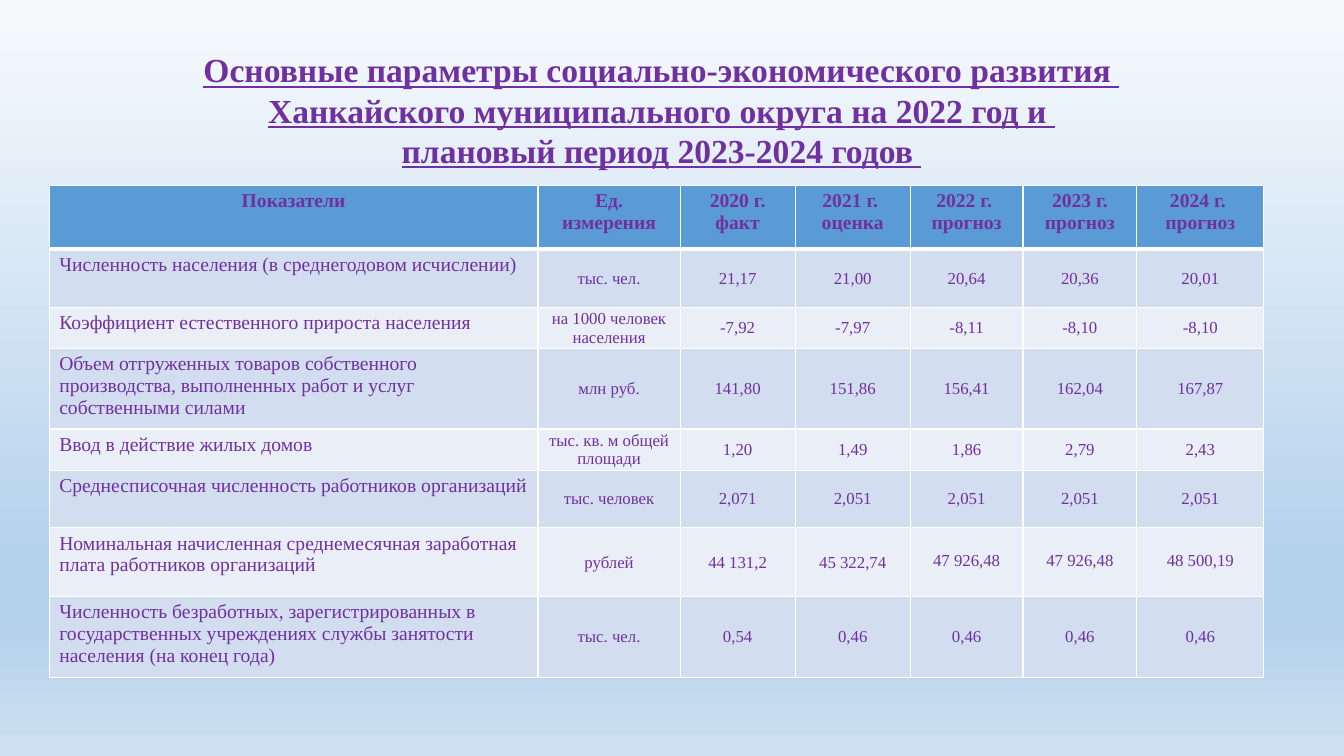
from lxml import etree
from pptx import Presentation
from pptx.dml.color import RGBColor
from pptx.enum.text import MSO_ANCHOR, MSO_AUTO_SIZE, PP_ALIGN
from pptx.oxml.ns import qn
from pptx.util import Cm, Pt

CENTER, LEFT = PP_ALIGN.CENTER, PP_ALIGN.LEFT
TOP, MIDDLE = MSO_ANCHOR.TOP, MSO_ANCHOR.MIDDLE
GROW = MSO_AUTO_SIZE.SHAPE_TO_FIT_TEXT

PURPLE = RGBColor(0x70, 0x30, 0xA0)
WHITE = RGBColor(0xFF, 0xFF, 0xFF)
HEADER_BLUE = RGBColor(0x5B, 0x9B, 0xD5)
BAND_DARK = RGBColor(0xD2, 0xDE, 0xEF)
BAND_LIGHT = RGBColor(0xEA, 0xEF, 0xF7)
SKY_TOP = RGBColor(0xF7, 0xFA, 0xFD)
SKY_MIDDLE = RGBColor(0xB5, 0xD2, 0xEC)
SKY_BOTTOM = RGBColor(0xCE, 0xE1, 0xF2)

SKY = [(0, SKY_TOP), (74, SKY_MIDDLE), (83, SKY_MIDDLE), (100, SKY_BOTTOM)]
TITLE = [
    "Основные параметры социально-экономического развития ",
    "Ханкайского муниципального округа на 2022 год и ",
    "плановый период 2023-2024 годов ",
]
HEADERS = [
    ["Показатели"], ["Ед.", "измерения"], ["2020 г.", "факт"], ["2021 г. ", "оценка"],
    ["2022 г. ", "прогноз"], ["2023 г.", "прогноз"], ["2024 г. ", "прогноз"],
]
INDICATORS = [
    ("Численность населения (в среднегодовом исчислении)",
     "тыс. чел.", "21,17", "21,00", "20,64", "20,36", "20,01"),
    ("Коэффициент естественного прироста населения",
     "на 1000 человек населения", "-7,92", "-7,97", "-8,11", "-8,10", "-8,10"),
    ("Объем отгруженных товаров собственного производства, "
     "выполненных работ и услуг собственными силами",
     "млн руб.", "141,80", "151,86", "156,41", "162,04", "167,87"),
    ("Ввод в действие жилых домов",
     "тыс. кв. м общей площади", "1,20", "1,49", "1,86", "2,79", "2,43"),
    ("Среднесписочная численность работников организаций",
     "тыс. человек", "2,071", "2,051", "2,051", "2,051", "2,051"),
    ("Номинальная начисленная среднемесячная заработная плата работников организаций",
     "рублей", "44 131,2", "45 322,74", "47 926,48", "47 926,48", "48 500,19"),
    ("Численность безработных, зарегистрированных в государственных учреждениях "
     "службы занятости населения (на конец года)",
     "тыс. чел.", "0,54", "0,46", "0,46", "0,46", "0,46"),
]
COLUMN_WIDTHS = [12.32, 3.58, 2.9, 2.9, 2.84, 2.87, 3.2]
ROW_HEIGHTS = [1.6, 1.47, 1.02, 1.42, 0.91, 1.45, 1.73, 1.73]
WAGE_ROW, FIRST_FORECAST_COLUMN = 6, 4


class SlideBuilder:
    font_name = "Times New Roman"
    text_color = PURPLE

    def __init__(self, slide):
        self.slide = slide

    def background(self, stops):
        fill = self.slide.background.fill
        fill.gradient()
        fill.gradient_angle = 270
        stop_list = self.slide.element.find(".//" + qn("a:gsLst"))
        for stop in list(stop_list):
            stop_list.remove(stop)
        for position, color in stops:
            stop = etree.SubElement(stop_list, qn("a:gs"), pos=str(position * 1000))
            etree.SubElement(stop, qn("a:srgbClr"), val=str(color))

    def add_lines(self, frame, lines, size, align=CENTER, bold=False, underline=None):
        for index, line in enumerate(lines):
            paragraph = frame.add_paragraph() if index else frame.paragraphs[0]
            paragraph.alignment = align
            run = paragraph.add_run()
            run.text = line
            run.font.name = self.font_name
            run.font.size = Pt(size)
            run.font.bold = bold
            run.font.underline = underline
            run.font.color.rgb = self.text_color

    def title(self, lines, left, top, width, height):
        box = self.slide.shapes.add_textbox(Cm(left), Cm(top), Cm(width), Cm(height))
        box.text_frame.word_wrap = True
        box.text_frame.auto_size = GROW
        self.add_lines(box.text_frame, lines, 24, bold=True, underline=True)

    def borders(self, cell, widths):
        properties = cell._tc.get_or_add_tcPr()
        for side, width in widths.items():
            line = etree.SubElement(properties, qn("a:ln" + side), w=str(Pt(width)))
            fill = etree.SubElement(line, qn("a:solidFill"))
            etree.SubElement(fill, qn("a:srgbClr"), val=str(WHITE))

    def cell(self, cell, lines, color, widths, size, anchor=TOP, **style):
        self.borders(cell, widths)
        cell.fill.solid()
        cell.fill.fore_color.rgb = color
        cell.vertical_anchor = anchor
        if anchor == MIDDLE:
            cell.margin_left = cell.margin_right = cell.margin_top = Cm(0.02)
            cell.margin_bottom = Cm(0)
        self.add_lines(cell.text_frame, lines, size, **style)

    def table(self, left, top):
        frame = self.slide.shapes.add_table(
            len(ROW_HEIGHTS), len(COLUMN_WIDTHS), Cm(left), Cm(top),
            Cm(sum(COLUMN_WIDTHS)), Cm(sum(ROW_HEIGHTS)))
        table = frame.table
        for column, width in zip(table.columns, COLUMN_WIDTHS):
            column.width = Cm(width)
        for row, height in zip(table.rows, ROW_HEIGHTS):
            row.height = Cm(height)
        for column, lines in enumerate(HEADERS):
            self.cell(table.cell(0, column), lines, HEADER_BLUE,
                      {"L": 1, "R": 1, "T": 1, "B": 3}, 14, bold=True)
        for row, values in enumerate(INDICATORS, 1):
            color = BAND_DARK if row % 2 else BAND_LIGHT
            widths = {"L": 1, "R": 1, "T": 3 if row == 1 else 1, "B": 1}
            for column, value in enumerate(values):
                cell = table.cell(row, column)
                if column == 0:
                    self.cell(cell, [value], color, widths, 14, align=LEFT)
                elif row == WAGE_ROW and column >= FIRST_FORECAST_COLUMN:
                    self.cell(cell, [value], color, widths, 12)
                    cell.margin_top = Cm(0.61)
                else:
                    self.cell(cell, [value], color, widths, 12, MIDDLE)


def main():
    presentation = Presentation()
    presentation.slide_width = Cm(33.87)
    presentation.slide_height = Cm(19.05)
    builder = SlideBuilder(presentation.slides.add_slide(presentation.slide_layouts[6]))
    builder.background(SKY)
    builder.title(TITLE, 1.24, 1.12, 30.86, 3.33)
    builder.table(1.24, 4.67)
    presentation.save("out.pptx")


if __name__ == "__main__":
    main()
